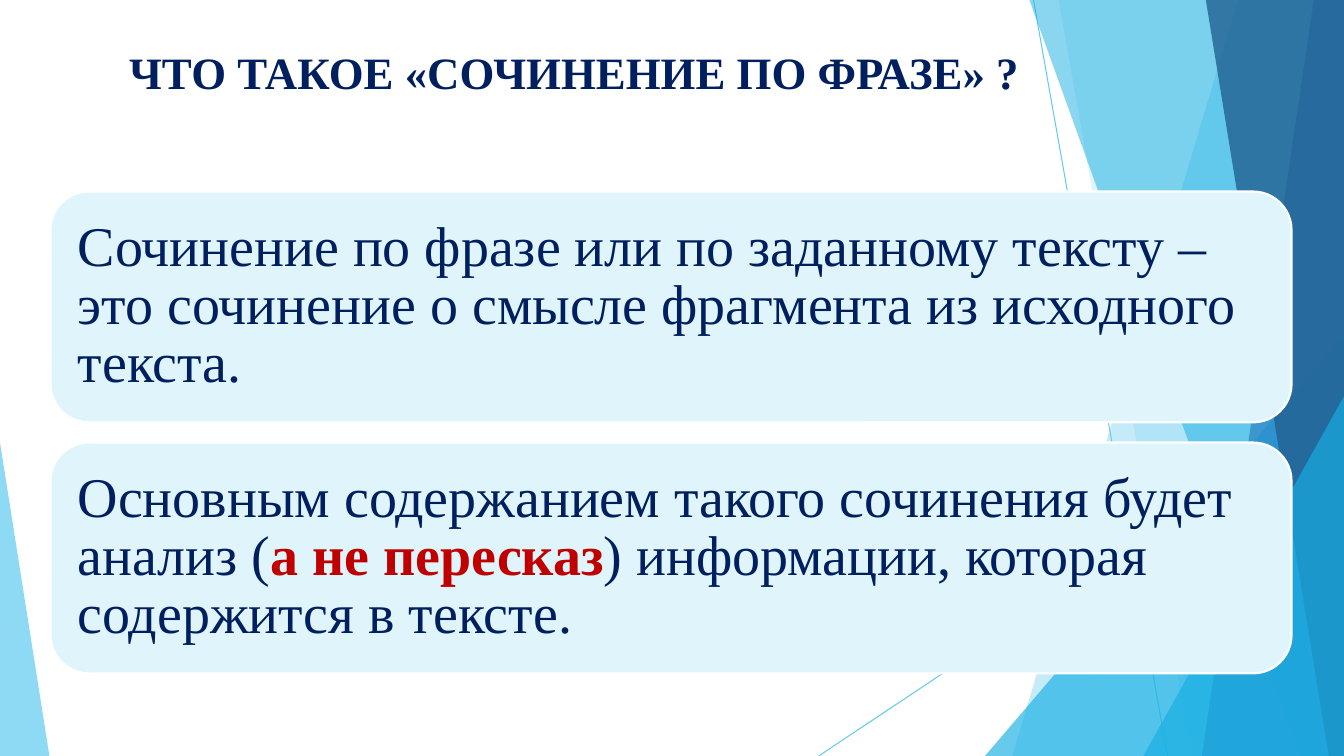
import pptx
import pptx.dml.color
import pptx.enum.shapes
import pptx.enum.text
import pptx.oxml
import pptx.oxml.ns
import pptx.util
from pptx.util import Inches

COLORS = {"sky": "5FCAEE", "azure": "17AFE3", "blue": "2D83C3", "deep": "226192",
          "card": "DFF5FB", "white": "FFFFFF", "navy": "001F5F", "red": "C00000"}
WIDTH, HEIGHT = 13.33, 7.5

# Theme lines: start and end points
RAYS = [((10.25, 0), (11.58, HEIGHT)), ((WIDTH, 4.03), (8.12, HEIGHT))]

# Theme facets: colour, opacity in percent, corner points
FACETS = [
    ("sky", 36, [(WIDTH, 0), (12.28, 0), (10.04, HEIGHT), (WIDTH, HEIGHT)]),
    ("sky", 20, [(WIDTH, 0), (10.5, 0), (11.82, HEIGHT), (WIDTH, HEIGHT)]),
    ("azure", 66, [(WIDTH, 3.33), (9.77, HEIGHT), (WIDTH, HEIGHT)]),
    ("azure", 50, [(WIDTH, 0), (10.21, 0), (12.91, HEIGHT), (WIDTH, HEIGHT)]),
    ("blue", 70, [(WIDTH, 0), (13.03, 0), (11.92, HEIGHT), (WIDTH, HEIGHT)]),
    ("deep", 80, [(WIDTH, 0), (11.96, 0), (13.18, HEIGHT), (WIDTH, HEIGHT)]),
    ("azure", 66, [(WIDTH, 3.93), (11.34, HEIGHT), (WIDTH, HEIGHT)]),
    ("sky", 70, [(0, 4.39), (0, HEIGHT), (0.49, HEIGHT)]),
]

TITLE = "ЧТО ТАКОЕ «СОЧИНЕНИЕ ПО ФРАЗЕ» ?"

# Each card is a list of runs: text, colour, bold
CARDS = [
    [("Сочинение по фразе или по заданному тексту – это сочинение "
      "о смысле фрагмента из исходного текста.", "navy", False)],
    [("Основным содержанием такого сочинения будет анализ (", "navy", False),
     ("а не пересказ", "red", True),
     (") информации, которая содержится в тексте.", "navy", False)],
]
CARD_TOP, CARD_HEIGHT, CARD_STEP = 1.9, 2.29, 2.49


def rgb(name):
    return pptx.dml.color.RGBColor.from_string(COLORS[name])


def set_format(obj, values):
    for name, value in values.items():
        setattr(obj, name, value)


def set_fill(shape, color, opacity=100):
    shape.shadow.inherit = False
    shape.fill.solid()
    shape.fill.fore_color.rgb = rgb(color)
    if opacity < 100:
        clr = shape.fill._xPr.find(".//" + pptx.oxml.ns.qn("a:srgbClr"))
        alpha = pptx.oxml.parse_xml(
            f'<a:alpha {pptx.oxml.ns.nsdecls("a")} val="{opacity * 1000}"/>')
        clr.append(alpha)


def add_ray(s, start, end):
    ray = s.shapes.add_connector(pptx.enum.shapes.MSO_CONNECTOR.STRAIGHT,
                                 *(Inches(v) for v in start + end))
    ray.line.color.rgb = rgb("sky")
    ray.line.width = pptx.util.Pt(0.72)
    ray._element.spPr.append(pptx.oxml.parse_xml(
        f'<a:effectLst {pptx.oxml.ns.nsdecls("a")}/>'))


def add_facet(s, color, opacity, points):
    corners = [(Inches(x), Inches(y)) for x, y in points]
    builder = s.shapes.build_freeform(*corners[0])
    builder.add_line_segments(corners[1:], close=True)
    facet = builder.convert_to_shape()
    set_fill(facet, color, opacity)
    facet.line.fill.background()


def add_run(p, text, size, color, bold):
    r = p.add_run()
    r.text = text
    set_format(r.font, {"name": "Times New Roman", "size": pptx.util.Pt(size),
                        "bold": bold})
    r.font.color.rgb = rgb(color)


def set_title(s, text):
    title = s.shapes.title
    set_format(title, {"left": Inches(1.27), "top": Inches(0.42),
                       "width": Inches(8.85), "height": Inches(0.56)})
    tf = title.text_frame
    set_format(tf, {"margin_left": Inches(0.01), "margin_right": 0,
                    "margin_top": Inches(0.02), "margin_bottom": 0, "word_wrap": True,
                    "auto_size": pptx.enum.text.MSO_AUTO_SIZE.NONE,
                    "vertical_anchor": pptx.enum.text.MSO_ANCHOR.TOP})
    p = tf.paragraphs[0]
    p.alignment = pptx.enum.text.PP_ALIGN.LEFT
    add_run(p, text, 32, "navy", True)


def add_card(s, top, runs):
    card = s.shapes.add_shape(pptx.enum.shapes.MSO_SHAPE.ROUNDED_RECTANGLE,
                              Inches(0.5), Inches(top), Inches(12.31), Inches(CARD_HEIGHT))
    card.adjustments[0] = 0.167
    set_fill(card, "card")
    card.line.color.rgb = rgb("white")
    card.line.width = pptx.util.Pt(1.56)
    tf = card.text_frame
    set_format(tf, {"margin_left": Inches(0.16), "margin_right": Inches(0.4),
                    "margin_top": 0, "margin_bottom": 0, "word_wrap": True,
                    "vertical_anchor": pptx.enum.text.MSO_ANCHOR.MIDDLE})
    p = tf.paragraphs[0]
    set_format(p, {"alignment": pptx.enum.text.PP_ALIGN.LEFT,
                   "line_spacing": pptx.util.Pt(41.4)})
    for text, color, bold in runs:
        add_run(p, text, 40, color, bold)


def main():
    prs = pptx.Presentation()
    set_format(prs, {"slide_width": Inches(WIDTH), "slide_height": Inches(HEIGHT)})
    s = prs.slides.add_slide(prs.slide_layouts.get_by_name("Title Only"))

    # Background decoration
    for start, end in RAYS:
        add_ray(s, start, end)
    for color, opacity, points in FACETS:
        add_facet(s, color, opacity, points)

    # Title and cards
    set_title(s, TITLE)
    for i, runs in enumerate(CARDS):
        add_card(s, CARD_TOP + i * CARD_STEP, runs)

    prs.save("out.pptx")


if __name__ == "__main__":
    main()
